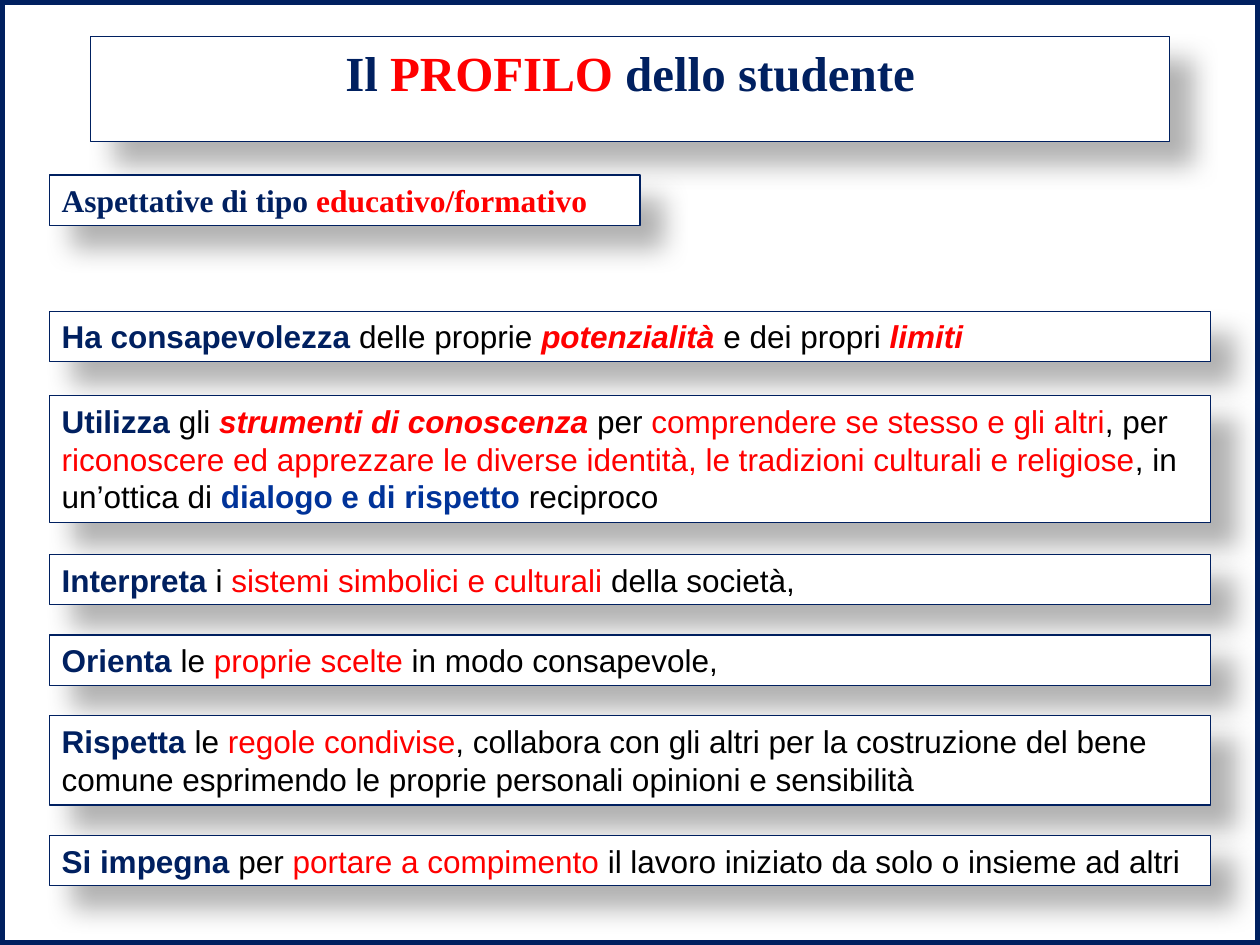
from lxml.etree import SubElement
from pptx import Presentation
from pptx.dml.color import RGBColor
from pptx.enum.shapes import MSO_SHAPE
from pptx.enum.text import MSO_ANCHOR, MSO_AUTO_SIZE, PP_ALIGN
from pptx.oxml.ns import qn
from pptx.util import Inches, Pt

NAVY, RED, BLACK, BLUE, WHITE = "002060", "FF0000", "000000", "003399", "FFFFFF"
LEFT, WIDTH, LINE_HEIGHT = 0.39, 9.22, 0.4

STYLES = {
    "lead": (NAVY, True, False),
    "plain": (BLACK, False, False),
    "red": (RED, False, False),
    "strong": (RED, True, False),
    "key": (RED, True, True),
    "blue": (BLUE, True, False),
}

TITLE = [("Il ", "lead"), ("PROFILO ", "strong"), ("dello studente", "lead")]
SUBTITLE = [("Aspettative di tipo ", "lead"), ("educativo/formativo", "strong")]
EXPECTATIONS = [
    (2.47, LINE_HEIGHT, [
        ("Ha consapevolezza ", "lead"), ("delle proprie ", "plain"),
        ("potenzialità ", "key"), ("e dei propri ", "plain"), ("limiti", "key")]),
    (3.14, 1.01, [
        ("Utilizza", "lead"), (" gli ", "plain"),
        ("strumenti di conoscenza ", "key"), ("per ", "plain"),
        ("comprendere se stesso e gli altri", "red"), (", per ", "plain"),
        ("riconoscere ed apprezzare le diverse identità, "
         "le tradizioni culturali e religiose", "red"),
        (", in un’ottica di ", "plain"), ("dialogo e di rispetto ", "blue"),
        ("reciproco", "plain")]),
    (4.4, LINE_HEIGHT, [
        ("Interpreta", "lead"), (" i ", "plain"),
        ("sistemi simbolici e culturali ", "red"), ("della società,", "plain")]),
    (5.04, LINE_HEIGHT, [
        ("Orienta", "lead"), (" le ", "plain"),
        ("proprie scelte ", "red"), ("in modo consapevole,", "plain")]),
    (5.68, 0.71, [
        ("Rispetta", "lead"), (" le ", "plain"), ("regole condivise", "red"),
        (", collabora con gli altri per la costruzione del bene comune "
         "esprimendo le proprie personali opinioni e sensibilità", "plain")]),
    (6.63, LINE_HEIGHT, [
        ("Si impegna ", "lead"), ("per ", "plain"),
        ("portare a compimento ", "red"),
        ("il lavoro iniziato da solo o insieme ad altri", "plain")]),
]


def color(value):
    """Return the colour for a hex string."""
    return RGBColor.from_string(value)


def add_shadow(shape):
    """Give the shape a soft shadow towards the lower right."""
    effects = SubElement(shape._element.spPr, qn("a:effectLst"))
    shadow = SubElement(
        effects, qn("a:outerShdw"), blurRad=str(Pt(15)), dist=str(Pt(18)),
        dir=str(45 * 60000), algn="tl", rotWithShape="0")
    shade = SubElement(shadow, qn("a:srgbClr"), val=BLACK)
    SubElement(shade, qn("a:alpha"), val="30000")


def style_panel(shape):
    """Apply the white fill, thin navy line and shadow of a panel."""
    shape.fill.solid()
    shape.fill.fore_color.rgb = color(WHITE)
    shape.line.color.rgb = color(NAVY)
    shape.line.width = Pt(0.75)
    add_shadow(shape)


def write_runs(shape, runs, font_name, size, alignment=PP_ALIGN.LEFT):
    """Write the styled runs as the only paragraph of the shape."""
    frame = shape.text_frame
    frame.word_wrap = True
    frame.auto_size = MSO_AUTO_SIZE.SHAPE_TO_FIT_TEXT
    frame.vertical_anchor = MSO_ANCHOR.TOP
    paragraph = frame.paragraphs[0]
    paragraph.alignment = alignment
    paragraph.font.name = font_name
    paragraph.font.size = Pt(size)
    for text, style in runs:
        run = paragraph.add_run()
        run.text = text
        value, run.font.bold, run.font.italic = STYLES[style]
        run.font.color.rgb = color(value)


def add_frame(slide, width, height):
    """Outline the whole slide in navy."""
    frame = slide.shapes.add_shape(MSO_SHAPE.RECTANGLE, 0, 0, width, height)
    frame.shadow.inherit = False
    frame.fill.background()
    frame.line.color.rgb = color(NAVY)
    frame.line.width = Pt(6)


def set_title(slide):
    """Place and format the title placeholder."""
    title = slide.shapes.title
    title.left, title.top = Inches(0.72), Inches(0.29)
    title.width, title.height = Inches(8.56), Inches(0.57)
    style_panel(title)
    write_runs(title, TITLE, "Times New Roman", 28, PP_ALIGN.CENTER)


def add_panel(slide, top, width, height, runs, font_name="Arial"):
    """Add a shadowed text panel at the left margin."""
    panel = slide.shapes.add_textbox(
        Inches(LEFT), Inches(top), Inches(width), Inches(height))
    style_panel(panel)
    write_runs(panel, runs, font_name, 18)


def main():
    """Build and save the slide."""
    presentation = Presentation()
    presentation.slide_width = Inches(10)
    presentation.slide_height = Inches(7.5)
    slide = presentation.slides.add_slide(presentation.slide_layouts[5])
    add_frame(slide, presentation.slide_width, presentation.slide_height)
    set_title(slide)
    add_panel(slide, 1.39, 4.69, LINE_HEIGHT, SUBTITLE, "Times New Roman")
    for top, height, runs in EXPECTATIONS:
        add_panel(slide, top, WIDTH, height, runs)
    presentation.save("out.pptx")


if __name__ == "__main__":
    main()
